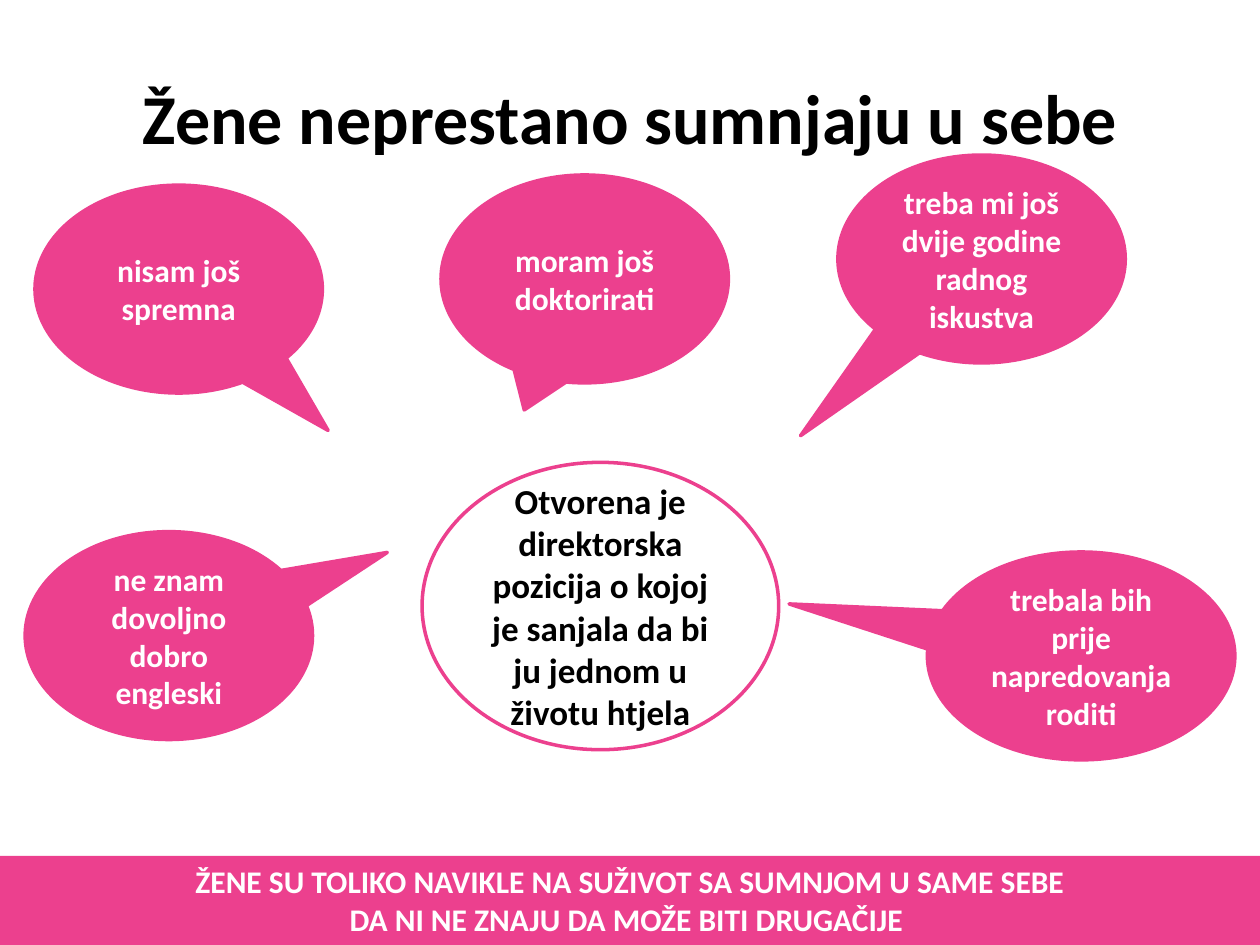
from pptx import Presentation
from pptx.dml.color import RGBColor
from pptx.enum.shapes import MSO_SHAPE
from pptx.enum.text import MSO_ANCHOR, PP_ALIGN
from pptx.util import Pt

PINK = "EC408E"
WHITE = "FFFFFF"
BLACK = "000000"


def color(value):
    return RGBColor.from_string(value)


def add_text_shape(kind, box, lines, size, text_color, fill=None, line=None, anchor=MSO_ANCHOR.MIDDLE):
    shape = slide.shapes.add_shape(kind, *[Pt(value) for value in box])
    shape.shadow.inherit = False
    if fill:
        shape.fill.solid()
        shape.fill.fore_color.rgb = color(fill)
    else:
        shape.fill.background()
    if line:
        shape.line.color.rgb = color(line)
        shape.line.width = Pt(2)
    else:
        shape.line.fill.background()
    frame = shape.text_frame
    frame.word_wrap = True
    frame.vertical_anchor = anchor
    frame.text = "\n".join(lines)
    for paragraph in frame.paragraphs:
        paragraph.alignment = PP_ALIGN.CENTER
        paragraph.font.name = "Calibri"
        paragraph.font.size = Pt(size)
        paragraph.font.bold = True
        paragraph.font.color.rgb = color(text_color)
    return shape


presentation = Presentation()
presentation.slide_width = Pt(720)
presentation.slide_height = Pt(540)
slide = presentation.slides.add_slide(presentation.slide_layouts[6])

title = slide.shapes.add_textbox(Pt(36), Pt(21.6), Pt(648), Pt(90))
title.text_frame.word_wrap = True
title.text_frame.vertical_anchor = MSO_ANCHOR.MIDDLE
paragraph = title.text_frame.paragraphs[0]
paragraph.text = "Žene neprestano sumnjaju u sebe"
paragraph.alignment = PP_ALIGN.CENTER
paragraph.font.name = "Calibri"
paragraph.font.size = Pt(40)
paragraph.font.bold = True
paragraph.font.color.rgb = color(BLACK)

banner_lines = [
    "ŽENE SU TOLIKO NAVIKLE NA SUŽIVOT SA SUMNJOM U SAME SEBE",
    "DA NI NE ZNAJU DA MOŽE BITI DRUGAČIJE ",
]
add_text_shape(MSO_SHAPE.RECTANGLE, (0, 489, 720, 51), banner_lines, 18, WHITE,
               fill=PINK, anchor=MSO_ANCHOR.TOP)

doubts = [
    ("nisam još spremna", 20, 105.8, 164.2, 0.52, 0.68),
    ("moram još doktorirati", 252, 100, 164.2, -0.21, 0.63),
    ("treba mi još dvije godine radnog iskustva", 478.8, 88.6, 164.2, -0.63, 0.85),
    ("ne znam dovoljno dobro engleski", 14.4, 303.8, 164.2, 0.76, -0.4),
    ("trebala bih prije napredovanja roditi", 530, 315.4, 175.7, -0.95, -0.25),
]
for text, left, top, width, tip_x, tip_y in doubts:
    callout = add_text_shape(MSO_SHAPE.OVAL_CALLOUT, (left, top, width, 118.8), [text], 18, WHITE,
                             fill=PINK, line=PINK)
    callout.adjustments[0] = tip_x
    callout.adjustments[1] = tip_y

opening = "Otvorena je direktorska pozicija o kojoj je sanjala da bi ju jednom u životu htjela"
add_text_shape(MSO_SHAPE.OVAL, (241.2, 264.2, 203.8, 164.2), [opening], 20, BLACK, line=PINK)

presentation.save("out.pptx")
